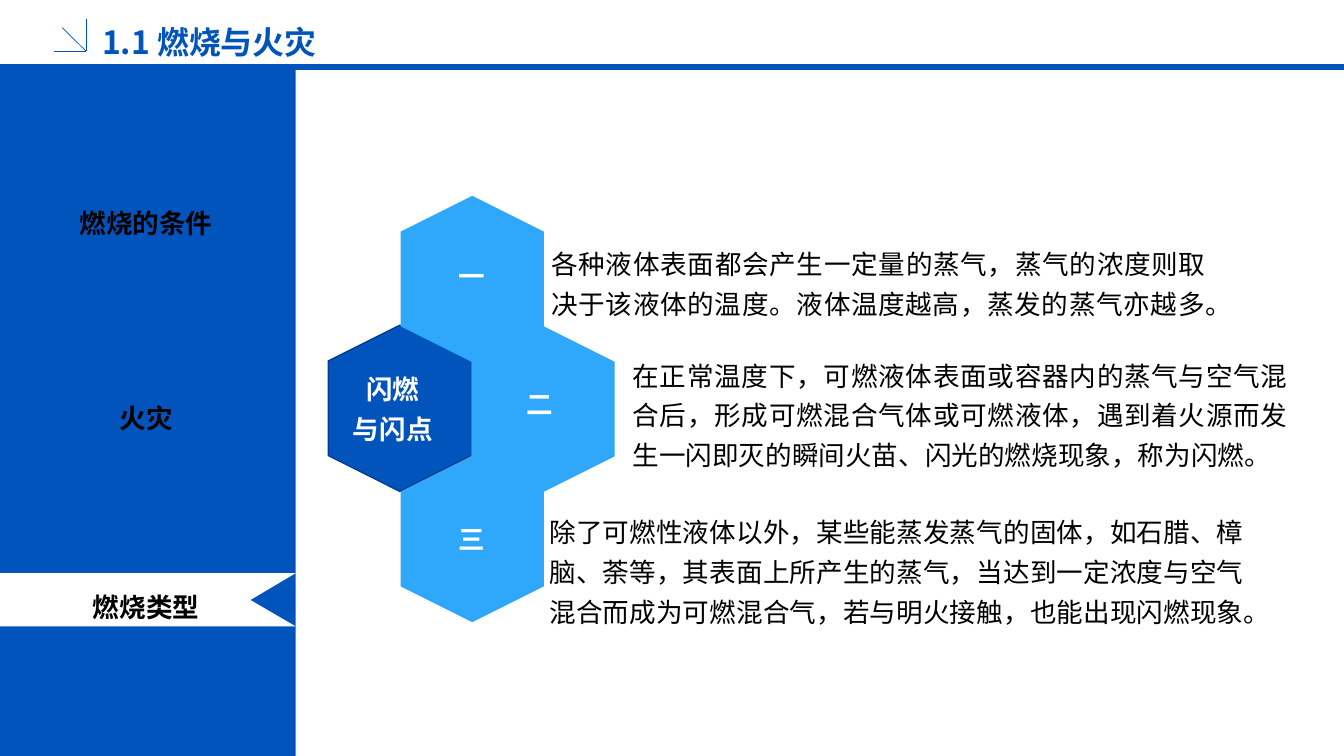
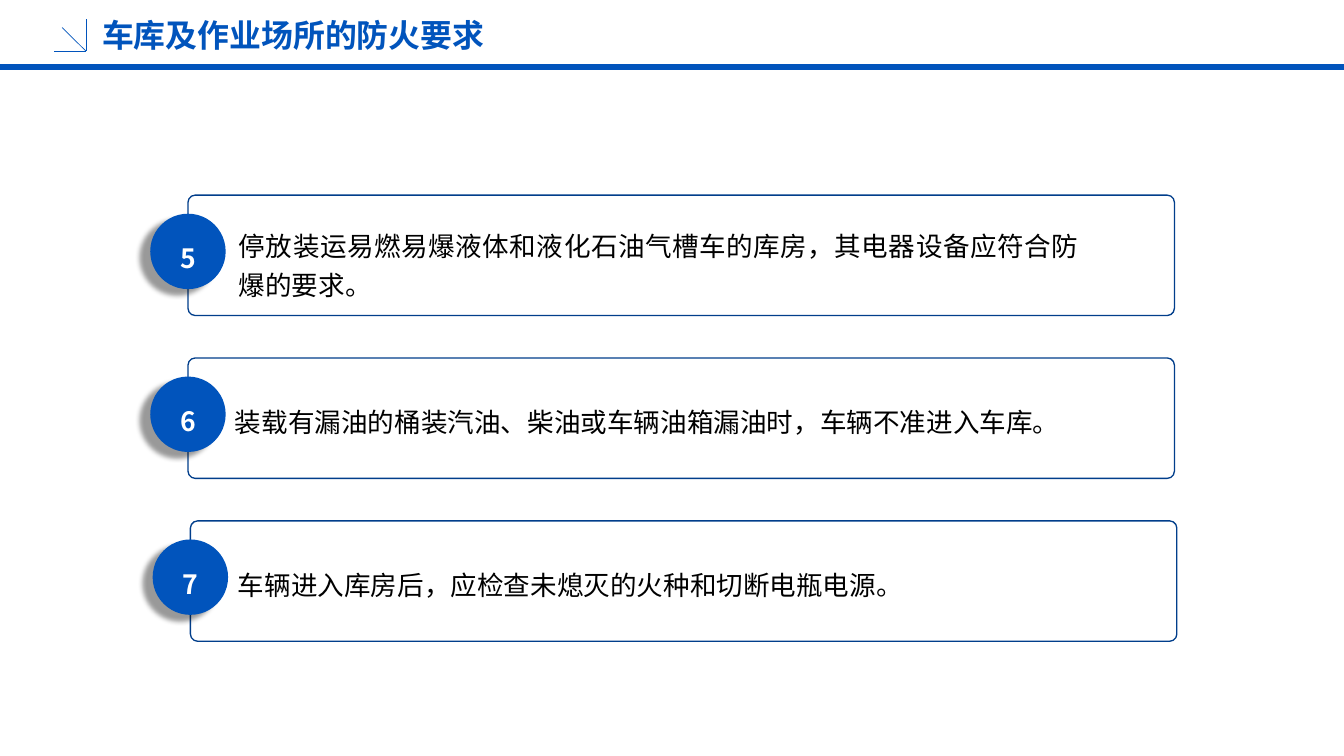
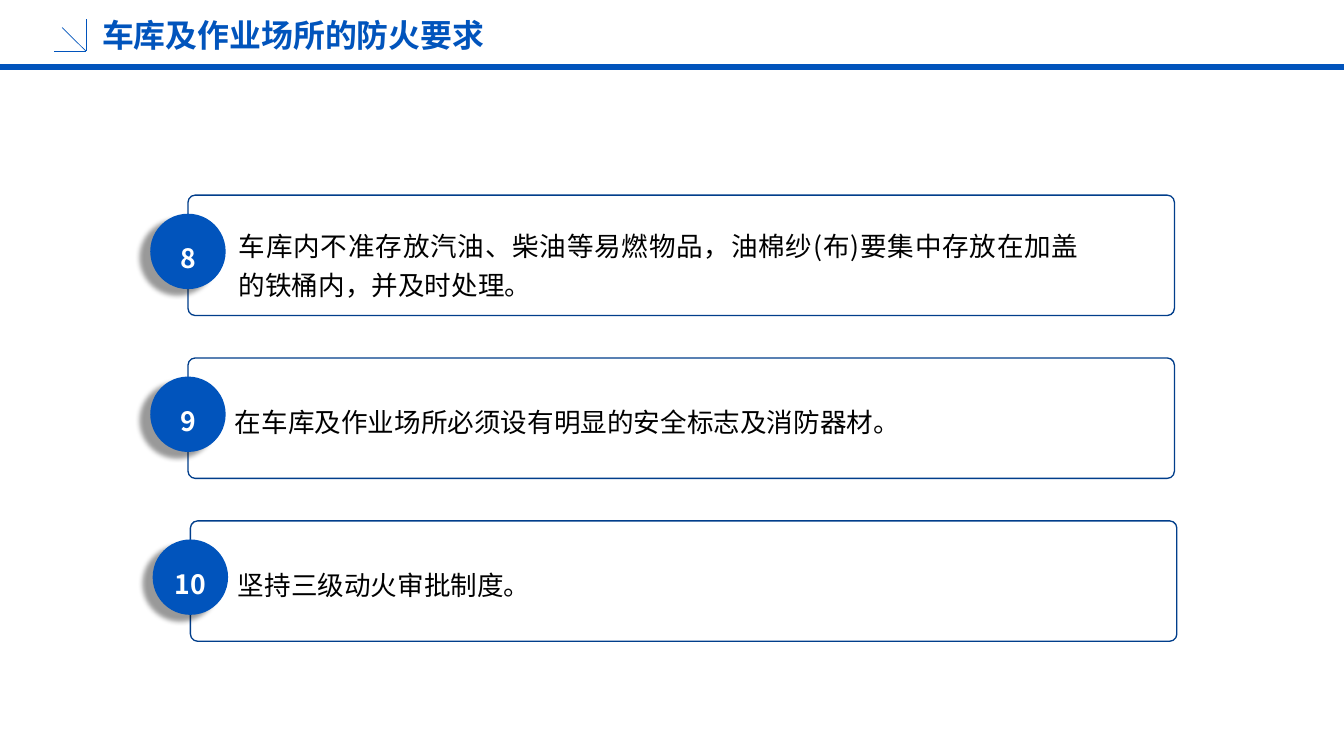
from lxml import etree
from pptx import Presentation
from pptx.dml.color import RGBColor
from pptx.enum import shapes, text
from pptx.oxml import ns
from pptx.util import Pt

BLUE, NAVY, SKY = "0154BC", "013E8B", "2FA7FB"
WHITE, BLACK = "FFFFFF", "000000"
SANS = "Noto Sans CJK SC"
KIND = shapes.MSO_SHAPE
MID, TOP = text.MSO_ANCHOR.MIDDLE, text.MSO_ANCHOR.TOP
LEFT, MIDST, FULL = (text.PP_ALIGN.LEFT, text.PP_ALIGN.CENTER,
                     text.PP_ALIGN.JUSTIFY)

HEAD = {"size": Pt(24), "bold": True, "name": SANS}
SIDE = {"size": Pt(20), "bold": True, "name": "Arial"}
MARK = {"size": Pt(20), "bold": True, "name": SANS}
BODY = {"size": Pt(20), "bold": False, "name": SANS}


def paint(fill, hue):
    """Fill a shape, line or font with a hex colour; None clears it."""
    if hue is None:
        fill.background()
    else:
        fill.solid()
        fill.fore_color.rgb = RGBColor.from_string(hue)


def write(page, box, words, style, hue=BLACK, align=FULL, anchor=MID, lead=1.25):
    """Add a text box; each line of words becomes a paragraph."""
    frame = page.shapes.add_textbox(*map(Pt, box)).text_frame
    frame.text = words
    for key, val in {"word_wrap": True, "vertical_anchor": anchor}.items():
        setattr(frame, key, val)
    for para in frame.paragraphs:
        para.alignment, para.line_spacing = align, lead
        for run in para.runs:
            for key, val in style.items():
                setattr(run.font, key, val)
            paint(run.font.fill, hue)
            east = etree.SubElement(run.font._element, ns.qn("a:ea"))
            east.set("typeface", SANS)


deck = Presentation()
deck.slide_width, deck.slide_height = Pt(1012.32), Pt(569.52)

# Title, band and corner arrow on every slide
rules = [
    (0, 50.4, 1012.32, 50.4, 4.5),
    (41, 38.6, 64.8, 38.6, 0.5),
    (64.8, 38.6, 64.8, 14.6, 0.5),
    (64.8, 38.6, 46.8, 20.8, 0.5),
]
heads = [
    ("1.1 燃烧与火灾", (69.8, 12.2, 226.8, 32.4)),
    ("车库及作业场所的防火要求", (69.8, 10.8, 459.4, 24.5)),
    ("车库及作业场所的防火要求", (69.8, 10.8, 459.4, 24.5)),
]
pages = []
for title, box in heads:
    page = deck.slides.add_slide(deck.slide_layouts[6])
    for *ends, wide in rules:
        rule = page.shapes.add_connector(shapes.MSO_CONNECTOR.STRAIGHT, *map(Pt, ends))
        paint(rule.line.fill, BLUE)
        rule.line.width = Pt(wide)
        etree.SubElement(rule._element.spPr, ns.qn("a:effectLst"))
    write(page, box, title, HEAD, BLUE, LEFT, lead=1.2)
    pages.append(page)

# Slide 1: sidebar with the current topic notched
page = pages[0]
side = page.shapes.add_shape(KIND.RECTANGLE, 0, Pt(52.6), Pt(222.6), Pt(516.92))
pen = page.shapes.build_freeform(0, Pt(431.8))
notch = [(222.6, 431.8), (188.6, 452), (222.6, 471.8), (0, 471.8)]
pen.add_line_segments([(Pt(x), Pt(y)) for x, y in notch])
for shape, hue in ((side, BLUE), (pen.convert_to_shape(), WHITE)):
    shape.shadow.inherit = False
    paint(shape.fill, hue)
    paint(shape.line.fill, None)
for topic, top in (("燃烧的条件", 148.3), ("火灾", 295.2), ("燃烧类型", 437.8)):
    write(page, (25, top, 170, 33.8), topic, SIDE, align=MIDST, lead=1.2)

# Slide 1: honeycomb
cells = [
    (238.5, 253.6, BLUE, NAVY, "闪燃\n与闪点", (245.5, 271.4, 100.8, 67.7)),
    (293, 156.2, SKY, None, "一", (326.2, 186.5, 58.3, 37.4)),
    (346.3, 254.2, SKY, None, "二", (380.9, 283, 51.1, 37.4)),
    (293, 352.1, SKY, None, "三", (331.9, 384.5, 47.5, 37.4)),
]
for left, top, hue, edge, name, box in cells:
    cell = page.shapes.add_shape(KIND.HEXAGON, Pt(left), Pt(top), Pt(125.3), Pt(108))
    cell.rotation = 90
    cell.shadow.inherit = False
    paint(cell.fill, hue)
    paint(cell.line.fill, edge)
    if edge:
        cell.line.width = Pt(1)
for *_, name, box in cells:
    write(page, box, name, MARK, WHITE, MIDST, TOP)

notes = [
    ((408.2, 177.1, 506.9, 67.7),
     "各种液体表面都会产生一定量的蒸气，蒸气的浓度则取决于该液体的温度。"
     "液体温度越高，蒸发的蒸气亦越多。"),
    ((469.4, 261.4, 507.6, 97.9),
     "在正常温度下，可燃液体表面或容器内的蒸气与空气混合后，形成可燃混合气体或可燃液体，"
     "遇到着火源而发生一闪即灭的瞬间火苗、闪光的燃烧现象，称为闪燃。"),
    ((406.8, 379.4, 537.1, 97.9),
     "除了可燃性液体以外，某些能蒸发蒸气的固体，如石腊、樟脑、荼等，其表面上所产生的蒸气，"
     "当达到一定浓度与空气混合而成为可燃混合气，若与明火接触，也能出现闪燃现象。"),
]
for box, words in notes:
    write(page, box, words, BODY, anchor=TOP)

# Slides 2 and 3: numbered cards
rows = [  # card left, text left, text width, text height
    (141.6, 172.8, 646.6, 72),
    (141.6, 169.9, 648, 62.6),
    (143.4, 172.1, 714.2, 62.6),
]
needs = [
    (5, ["停放装运易燃易爆液体和液化石油气槽车的库房，其电器设备应符合防爆的要求。",
         "装载有漏油的桶装汽油、柴油或车辆油箱漏油时，车辆不准进入车库。",
         "车辆进入库房后，应检查未熄灭的火种和切断电瓶电源。"]),
    (8, ["车库内不准存放汽油、柴油等易燃物品，油棉纱(布)要集中存放在加盖的铁桶内，并及时处理。",
         "在车库及作业场所必须设有明显的安全标志及消防器材。",
         "坚持三级动火审批制度。"]),
]
SIZE, STEP = 56.8, 122.7
for page, (first, items) in zip(pages[1:], needs):
    for i, (words, (left, start, wide, high)) in enumerate(zip(items, rows)):
        top = 147 + i * STEP
        card = page.shapes.add_shape(KIND.ROUNDED_RECTANGLE, Pt(left), Pt(top),
                                     Pt(743), Pt(90.7))
        card.adjustments[0] = 0.06
        card.line.width = Pt(1)
        disc = page.shapes.add_shape(KIND.OVAL, Pt(left - SIZE / 2), Pt(top + 14),
                                     Pt(SIZE), Pt(SIZE))
        for shape, hue, edge in ((card, None, NAVY), (disc, BLUE, None)):
            shape.shadow.inherit = False
            paint(shape.fill, hue)
            paint(shape.line.fill, edge)
        glow = disc._element.spPr.find(ns.qn("a:effectLst"))
        cast = etree.SubElement(glow, ns.qn("a:outerShdw"), blurRad=str(Pt(4)),
                                dist=str(Pt(9)), dir=str(149 * 60000),
                                algn="tr", rotWithShape="0")
        tone = etree.SubElement(cast, ns.qn("a:srgbClr"), val=BLACK)
        etree.SubElement(tone, ns.qn("a:alpha"), val="40000")
        write(page, (left - SIZE / 2, top + 18.8, SIZE, 51.1), str(first + i),
              MARK, WHITE, MIDST)
        write(page, (start, top + 14, wide, high), words, BODY)

deck.save("out.pptx")
